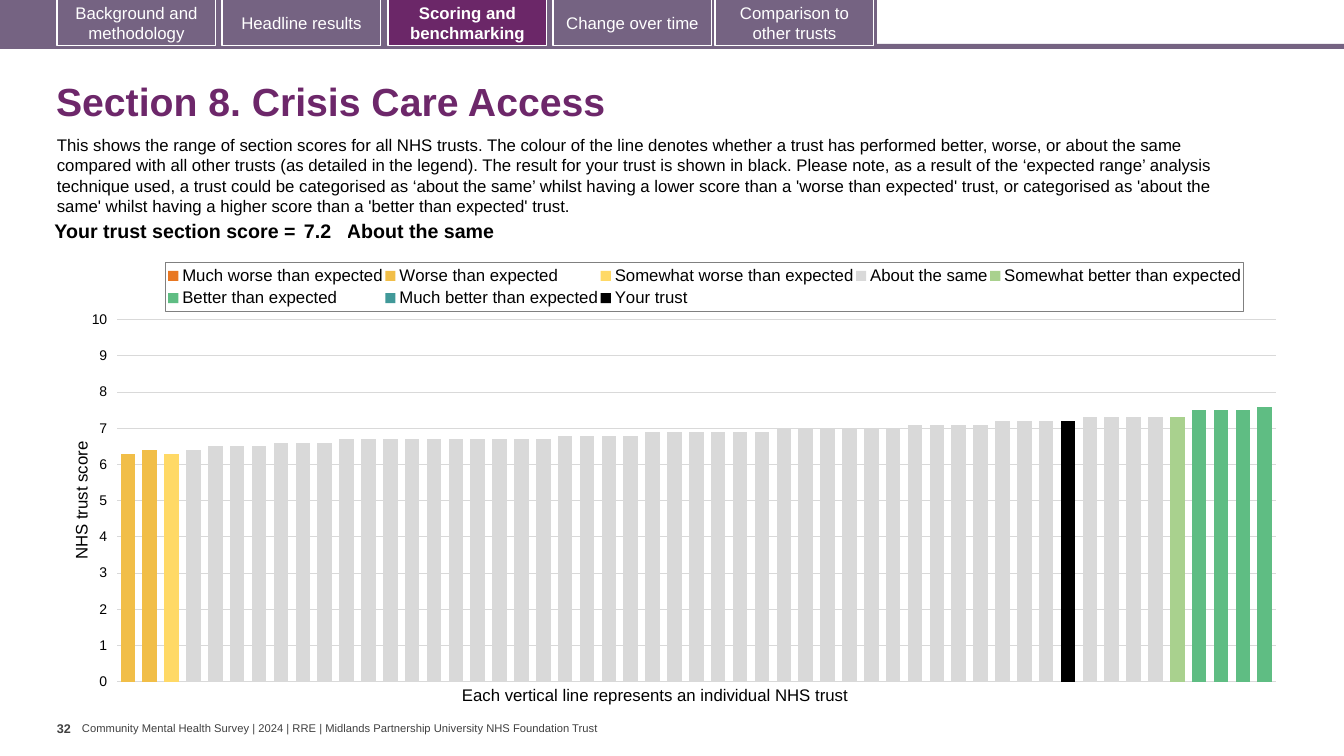
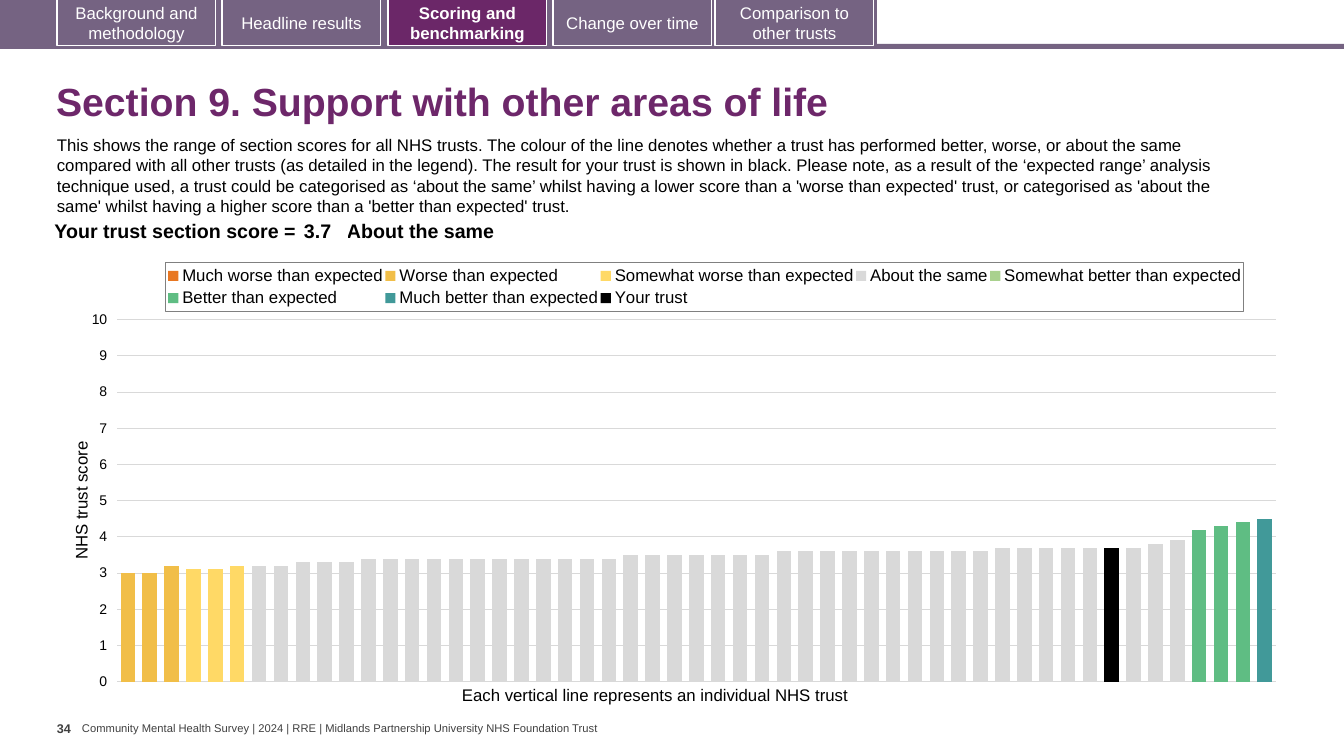
from copy import deepcopy

from lxml import etree
from pptx import Presentation
from pptx.chart.data import CategoryChartData
from pptx.dml.color import RGBColor
from pptx.enum.chart import (XL_CHART_TYPE, XL_LEGEND_POSITION, XL_TICK_LABEL_POSITION,
                             XL_TICK_MARK)
from pptx.enum.shapes import MSO_SHAPE
from pptx.enum.text import MSO_ANCHOR, MSO_AUTO_SIZE, PP_ALIGN
from pptx.oxml import parse_xml
from pptx.oxml.ns import qn
from pptx.util import Pt

PX = 914400 / 100.8
FONT = "Arial"
RECT = MSO_SHAPE.RECTANGLE
COLUMNS = XL_CHART_TYPE.COLUMN_CLUSTERED
TOP = XL_LEGEND_POSITION.TOP
NO_LABEL, LOW_LABEL = XL_TICK_LABEL_POSITION.NONE, XL_TICK_LABEL_POSITION.LOW
NO_TICK = XL_TICK_MARK.NONE
MIDDLE, UPPER = MSO_ANCHOR.MIDDLE, MSO_ANCHOR.TOP
LEFT, CENTER, RIGHT = PP_ALIGN.LEFT, PP_ALIGN.CENTER, PP_ALIGN.RIGHT
NO_FIT = MSO_AUTO_SIZE.NONE
NS = ('xmlns:c="http://schemas.openxmlformats.org/drawingml/2006/chart" '
      'xmlns:a="http://schemas.openxmlformats.org/drawingml/2006/main"')

COLORS = {"band": "756382", "active": "6B2768", "title": "6D276A", "white": "FFFFFF",
          "black": "000000", "foot": "404040", "grid": "D9D9D9", "frame": "808080"}
BANDS = {"Much worse than expected": "E87722", "Worse than expected": "F1BE48",
         "Somewhat worse than expected": "FFD966", "About the same": "D9D9D9",
         "Somewhat better than expected": "A9D18E", "Better than expected": "5FBD83",
         "Much better than expected": "419999"}
OWN = "Your trust"
TABS = [(57, "Background and methodology"), (222, "Headline results"),
        (388, "Scoring and benchmarking"), (553, "Change over time"),
        (715, "Comparison to other trusts")]
ACTIVE = "Scoring and benchmarking"
FOOTER = ("Community Mental Health Survey | 2024 | RRE | "
          "Midlands Partnership University NHS Foundation Trust")
INTRO = ("This shows the range of section scores for all NHS trusts. The colour of the line "
         "denotes whether a trust has performed better, worse, or about the same compared with "
         "all other trusts (as detailed in the legend). The result for your trust is shown in "
         "black. Please note, as a result of the ‘expected range’ analysis technique used, a "
         "trust could be categorised as ‘about the same’ whilst having a lower score than a "
         "'worse than expected' trust, or categorised as 'about the same' whilst having a higher "
         "score than a 'better than expected' trust.")
# Scores run from left to right as (score, number of trusts); "own" is the trust's index.
SECTIONS = [
    {"title": "Section 8. Crisis Care Access", "page": "32", "own": 43,
     "scores": {
         "Worse than expected": [(6.3, 1), (6.4, 1)],
         "Somewhat worse than expected": [(6.3, 1)],
         "About the same": [(6.4, 1), (6.5, 3), (6.6, 3), (6.7, 10), (6.8, 4), (6.9, 6),
                            (7, 6), (7.1, 4), (7.2, 4), (7.3, 4)],
         "Somewhat better than expected": [(7.3, 1)],
         "Better than expected": [(7.5, 3), (7.6, 1)]}},
    {"title": "Section 9. Support with other areas of life", "page": "34", "own": 45,
     "scores": {
         "Worse than expected": [(3, 2), (3.2, 1)],
         "Somewhat worse than expected": [(3.1, 2), (3.2, 1)],
         "About the same": [(3.2, 2), (3.3, 3), (3.4, 12), (3.5, 7), (3.6, 10), (3.7, 7),
                            (3.8, 1), (3.9, 1)],
         "Better than expected": [(4.2, 1), (4.3, 1), (4.4, 1)],
         "Much better than expected": [(4.5, 1)]}},
]


def px(*lengths):
    """Turn px lengths into EMU."""
    return [round(n * PX) for n in lengths]


def rgb(name):
    return RGBColor.from_string(COLORS[name])


def style(font, size, color="black", bold=False):
    font.name, font.size, font.bold = FONT, Pt(size), bold
    font.color.rgb = rgb(color)


def write(frame, text, size, color="black", bold=False, align=LEFT):
    frame.text = text
    para = frame.paragraphs[0]
    para.alignment = align
    style(para.font, size, color, bold)


def inset(frame, side, edge):
    """Set the left and right, then the top and bottom margins, in px."""
    frame.margin_left = frame.margin_right = px(side)[0]
    frame.margin_top = frame.margin_bottom = px(edge)[0]


def add_box(slide, place, fill, line=None):
    box = slide.shapes.add_shape(RECT, *px(*place))
    box.shadow.inherit = False
    box.fill.solid()
    box.fill.fore_color.rgb = rgb(fill)
    if line:
        box.line.color.rgb = rgb(line)
        box.line.width = Pt(0.75)
    else:
        box.line.fill.background()
    return box


def add_text(slide, place, text, size, wrap=False, **look):
    box = slide.shapes.add_textbox(*px(*place))
    box.text_frame.word_wrap = wrap
    write(box.text_frame, text, size, **look)
    return box


def add_tab(slide, left, label):
    on = label == ACTIVE
    box = add_box(slide, (left, -1, 159, 47), "active" if on else "band", "white")
    box.text_frame.word_wrap = True
    box.text_frame.vertical_anchor = MIDDLE
    write(box.text_frame, label, 12, "white", on, CENTER)
    return box


def add_frame(slide, layout):
    """Build the bands, tabs and footer once and move them to the layout."""
    for holder in list(layout.placeholders):
        if holder.placeholder_format.idx:
            layout.shapes.element.remove(holder.element)
    foot = add_text(slide, (82, 722, 522, 13), FOOTER, 8, color="foot")
    foot.text_frame.vertical_anchor = MIDDLE
    inset(foot.text_frame, 0, 0)
    parts = [foot, add_box(slide, (0, 44, 1344, 5), "band"),
             add_box(slide, (0, 0, 877, 47), "band")]
    parts += [add_tab(slide, left, label) for left, label in TABS]
    for part in parts:
        layout.shapes.element.append(part.element)


def set_title(slide, text):
    title = slide.shapes.title
    title.left, title.top, title.width, title.height = px(46, 67, 1259, 73)
    frame = title.text_frame
    frame.auto_size = NO_FIT
    frame.vertical_anchor = MIDDLE
    write(frame, text, 28, "title", True)
    frame.paragraphs[0].line_spacing = 0.9


def add_score(slide, score, band):
    table = slide.shapes.add_table(1, 3, *px(35, 217, 1178, 31)).table
    table.first_row = table.horz_banding = False
    cells = [(265, "Your trust section score =", RIGHT, 4), (47, str(score), LEFT, 4),
             (866, band, LEFT, 0)]
    for i, (width, text, align, side) in enumerate(cells):
        table.columns[i].width = px(width)[0]
        cell = table.cell(0, i)
        cell.fill.background()
        cell.vertical_anchor = UPPER
        inset(cell, side, 4)
        write(cell.text_frame, text, 14, bold=True, align=align)


def spread(section):
    """Give each band its scores, with gaps where other bands stand."""
    runs = {band: [score for score, count in section["scores"].get(band, [])
                   for _ in range(count)] for band in BANDS}
    total, start, rows = sum(map(len, runs.values())), 0, {}
    for band, run in runs.items():
        rows[band] = [None] * start + run + [None] * (total - start - len(run))
        start += len(run)
    return rows


def layout_xml(x, y, w, h, inner=False):
    target = '<c:layoutTarget val="inner"/>' if inner else ""
    return parse_xml(
        f'<c:layout {NS}><c:manualLayout>{target}<c:xMode val="edge"/><c:yMode val="edge"/>'
        f'<c:x val="{x}"/><c:y val="{y}"/><c:w val="{w}"/><c:h val="{h}"/>'
        '</c:manualLayout></c:layout>')


def split_own(plot):
    """Move the last series to a second pair of axes."""
    bars = plot.find(qn("c:barChart"))
    own = deepcopy(bars)
    bars.remove(bars.findall(qn("c:ser"))[-1])
    for ser in own.findall(qn("c:ser"))[:-1]:
        own.remove(ser)
    bars.addnext(own)
    axes = [deepcopy(plot.find(qn(tag))) for tag in ("c:catAx", "c:valAx")]
    swap = {ref.get("val"): str(9001 + i)
            for i, ref in enumerate(own.findall(qn("c:axId")))}
    for part in [own] + axes:
        for ref in part.iter(qn("c:axId"), qn("c:crossAx")):
            ref.set("val", swap[ref.get("val")])
    axes[1].find(qn("c:axPos")).set("val", "r")
    axes[1].find(qn("c:crosses")).set("val", "max")
    last = plot.findall(qn("c:valAx"))[-1]
    for axis in reversed(axes):
        last.addnext(axis)


def set_axes(chart, plot):
    chart.category_axis.visible = False
    axis = chart.value_axis
    axis.minimum_scale, axis.maximum_scale, axis.major_unit = 0, 10, 1
    axis.major_tick_mark = axis.minor_tick_mark = NO_TICK
    axis.format.line.fill.background()
    axis.has_major_gridlines = False
    axis.tick_label_position = NO_LABEL
    split_own(plot)
    axis.tick_label_position = LOW_LABEL
    axis.has_major_gridlines = True
    axis.major_gridlines.format.line.color.rgb = rgb("grid")
    axis.major_gridlines.format.line.width = Pt(0.75)
    style(axis.tick_labels.font, 10)
    write(axis.axis_title.text_frame, "NHS trust score", 12, align=CENTER)


def set_legend(chart):
    chart.has_legend = True
    legend = chart.legend
    legend.position = TOP
    legend.include_in_layout = False
    style(legend.font, 12)
    overlay = legend._element.find(qn("c:overlay"))
    for old in legend._element.findall(qn("c:layout")):
        legend._element.remove(old)
    overlay.addprevious(layout_xml(0.08, 0.03, 0.88, 0.11))
    edge = parse_xml(f'<c:spPr {NS}><a:ln w="9525"/></c:spPr>')
    fill = etree.SubElement(edge[0], qn("a:solidFill"))
    etree.SubElement(fill, qn("a:srgbClr"), val=COLORS["frame"])
    overlay.addnext(edge)


def add_scores(slide, rows, own, score):
    data = CategoryChartData()
    total = len(rows["About the same"])
    data.categories = [str(i + 1) for i in range(total)]
    for band, values in rows.items():
        data.add_series(band, values)
    data.add_series(OWN, [score if i == own else None for i in range(total)])
    chart = slide.shapes.add_chart(COLUMNS, *px(68, 249, 1225, 448), data).chart
    chart.has_title = False
    style(chart.font, 10)
    bars = chart.plots[0]
    bars.vary_by_categories = False
    bars.gap_width, bars.overlap = 50, 100
    for series, color in zip(bars.series, [*BANDS.values(), COLORS["black"]]):
        series.format.fill.solid()
        series.format.fill.fore_color.rgb = RGBColor.from_string(color)
    plot = chart._chartSpace.find(".//" + qn("c:plotArea"))
    set_axes(chart, plot)
    for old in plot.findall(qn("c:layout")):
        plot.remove(old)
    plot.insert(0, layout_xml(0.04, 0.158, 0.946, 0.808, True))
    set_legend(chart)


def add_section(slide, section):
    rows, own = spread(section), section["own"]
    band = next(name for name in rows if rows[name][own] is not None)
    score = rows[band][own]
    set_title(slide, section["title"])
    page = add_text(slide, (57, 716, 25, 40), section["page"], 9, color="foot", bold=True)
    inset(page.text_frame, 0, 5)
    add_text(slide, (47, 130, 1223, 92), INTRO, 12, wrap=True)
    add_text(slide, (452, 680, 414, 30),
             "Each vertical line represents an individual NHS trust", 12)
    add_scores(slide, rows, own, score)
    add_score(slide, score, band)


def main():
    deck = Presentation()
    deck.slide_width, deck.slide_height = px(1344, 756)
    layout = deck.slide_layouts[5]
    slides = [deck.slides.add_slide(layout) for _ in SECTIONS]
    add_frame(slides[0], layout)
    for slide, section in zip(slides, SECTIONS):
        add_section(slide, section)
    deck.save("out.pptx")


if __name__ == "__main__":
    main()
